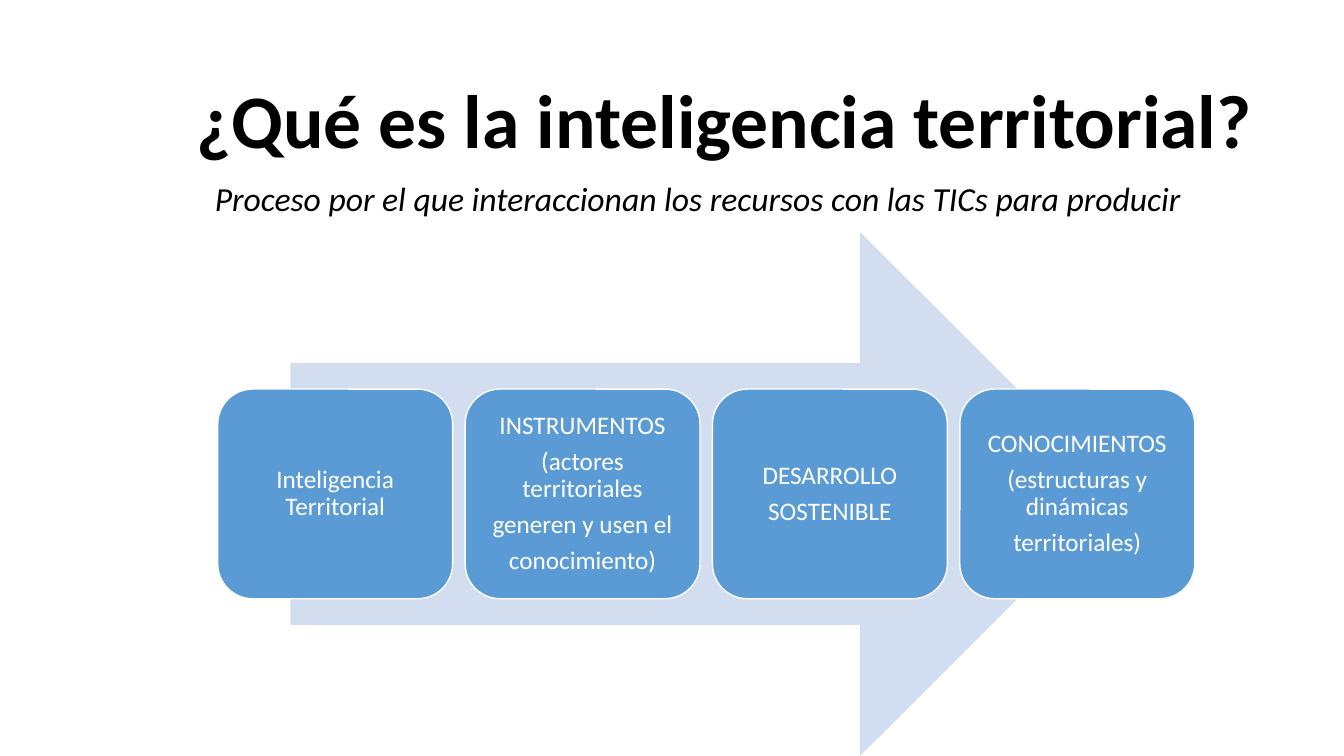
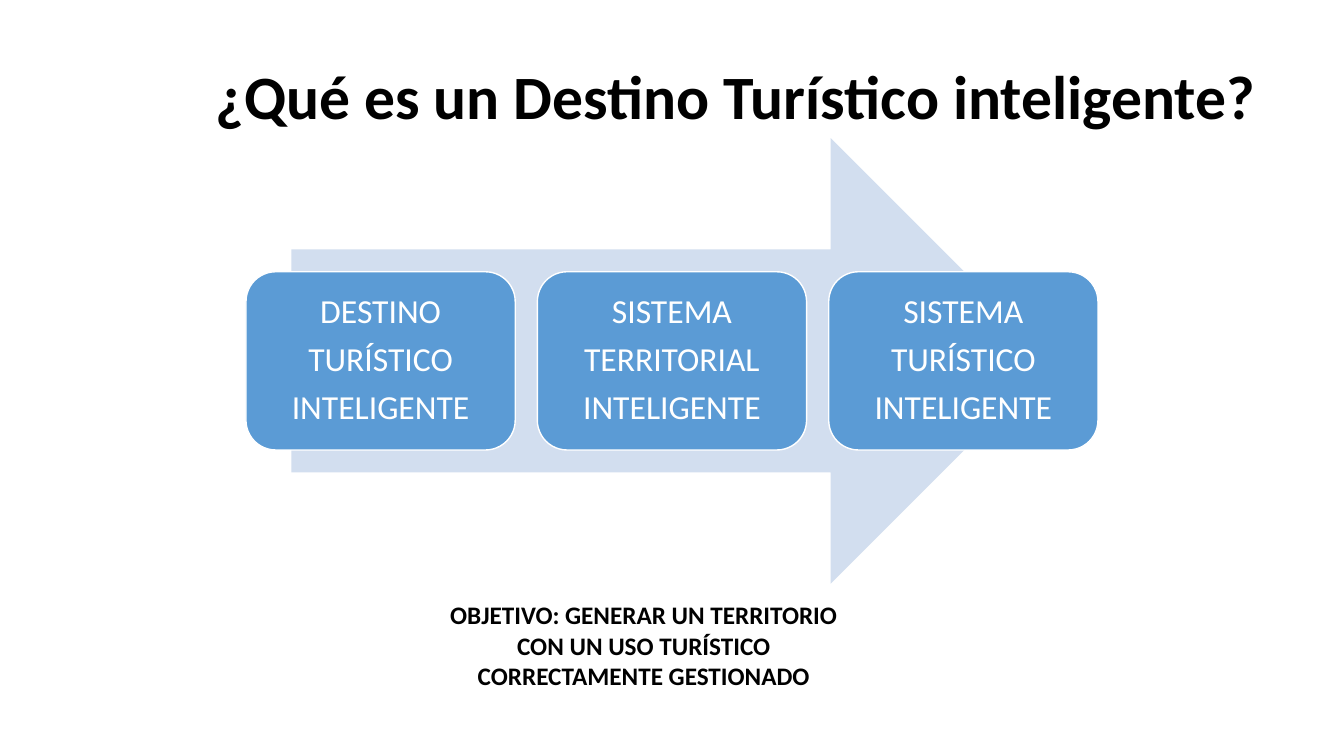
"""Build two slides that explain territorial intelligence and smart destinations."""
import pptx
import pptx.dml.color
import pptx.enum.shapes
import pptx.enum.text
import pptx.util

Inches = pptx.util.Inches
Pt = pptx.util.Pt
SHAPE = pptx.enum.shapes.MSO_SHAPE
ANCHOR = pptx.enum.text.MSO_ANCHOR

COLORS = {"text": "000000", "arrow": "D2DEEF", "step": "5B9BD5", "white": "FFFFFF"}
FONT = "Calibri"


def rgb(name):
    return pptx.dml.color.RGBColor.from_string(COLORS[name])


def write(sp, text, size, color="text", bold=False, italic=False,
          anchor=ANCHOR.TOP, spacing=0.9, after=0, inset=None):
    tf = sp.text_frame
    tf.word_wrap = True
    tf.vertical_anchor = anchor
    if inset is not None:
        tf.margin_left = tf.margin_right = Inches(inset)
        tf.margin_top = tf.margin_bottom = Inches(inset)
    for i, line in enumerate(text.split("\n")):
        p = tf.add_paragraph() if i else tf.paragraphs[0]
        p.alignment = pptx.enum.text.PP_ALIGN.CENTER
        p.line_spacing = spacing
        p.space_after = Pt(after)
        r = p.add_run()
        r.text = line
        r.font.name = FONT
        r.font.size = Pt(size)
        r.font.bold = bold
        r.font.italic = italic
        r.font.color.rgb = rgb(color)


def add_text(s, box, text, size, **fmt):
    write(s.shapes.add_textbox(*map(Inches, box)), text, size, **fmt)


def add_title(s, box, text, size):
    add_text(s, box, text, size, bold=True, anchor=ANCHOR.BOTTOM)


def add_shape(s, kind, box, fill, line=None):
    sp = s.shapes.add_shape(kind, *map(Inches, box))
    sp.shadow.inherit = False
    sp.fill.solid()
    sp.fill.fore_color.rgb = rgb(fill)
    if line:
        sp.line.color.rgb = rgb(line)
        sp.line.width = Pt(1)
    else:
        sp.line.fill.background()
    return sp


def add_process(s, arrow, left, right, width, steps, size, inset):
    add_shape(s, SHAPE.RIGHT_ARROW, arrow, "arrow")
    top, height = arrow[1] + 0.3 * arrow[3], 0.4 * arrow[3]
    pitch = (right - left - width) / (len(steps) - 1)
    for i, step in enumerate(steps):
        box = (left + i * pitch, top, width, height)
        sp = add_shape(s, SHAPE.ROUNDED_RECTANGLE, box, "step", "white")
        write(sp, step, size, color="white", anchor=ANCHOR.MIDDLE,
              after=0.35 * size, inset=inset)


def add_intelligence_slide(s):
    add_title(s, (1.76, 0.61, 10.85, 1.07), "¿Qué es la inteligencia territorial?", 54)
    add_text(s, (1.92, 1.76, 10, 0.54),
             "Proceso por el que interaccionan los recursos con las TICs para producir",
             24, italic=True)
    steps = ["Inteligencia Territorial",
             "INSTRUMENTOS\n(actores territoriales\ngeneren y usen el\nconocimiento)",
             "DESARROLLO\nSOSTENIBLE",
             "CONOCIMIENTOS\n(estructuras y dinámicas\nterritoriales)"]
    add_process(s, (2.88, 2.3, 8.25, 5.2), 2.16, 11.85, 2.33, steps, 18, 0.07)


def add_destination_slide(s):
    add_title(s, (1.26, 0.3, 12.08, 1.07), "¿Qué es un Destino Turístico inteligente?", 44)
    add_text(s, (3.05, 5.9, 6.67, 1.01),
             "OBJETIVO: GENERAR UN TERRITORIO\nCON UN USO TURÍSTICO\n"
             "CORRECTAMENTE GESTIONADO", 18, bold=True, spacing=1.0)
    steps = ["DESTINO\nTURÍSTICO\nINTELIGENTE",
             "SISTEMA\nTERRITORIAL\nINTELIGENTE",
             "SISTEMA\nTURÍSTICO\nINTELIGENTE"]
    add_process(s, (2.89, 1.37, 7.56, 4.42), 2.44, 10.89, 2.67, steps, 24, 0.1)


def main():
    prs = pptx.Presentation()
    prs.slide_width = Inches(13.33)
    prs.slide_height = Inches(7.5)
    for build in (add_intelligence_slide, add_destination_slide):
        build(prs.slides.add_slide(prs.slide_layouts[6]))
    prs.save("out.pptx")


if __name__ == "__main__":
    main()
